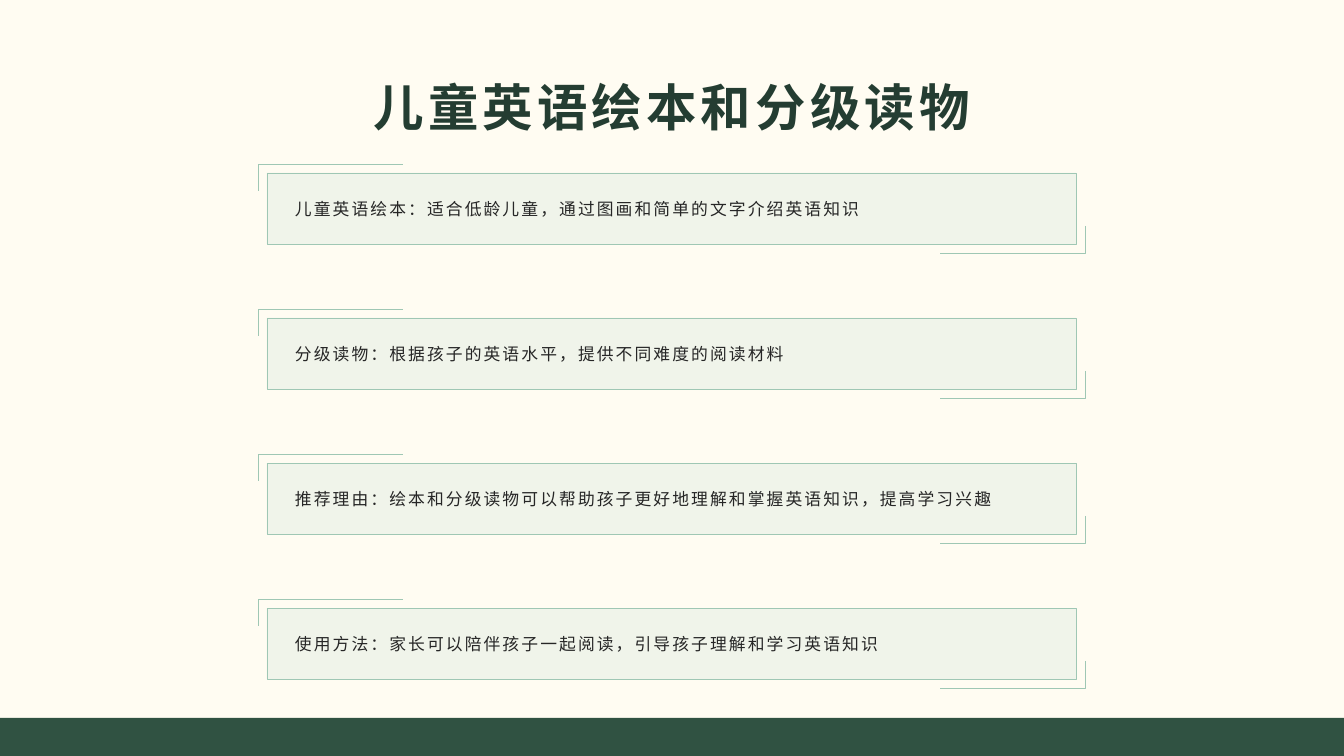
"""Builds the slide on English picture books and graded readers for children."""
from dataclasses import dataclass

from pptx import Presentation
from pptx import util as u
from pptx.dml.color import RGBColor
from pptx.enum import shapes, text
from pptx.oxml.ns import qn
from lxml import etree

PX = 914400 / 100.8
WIDTH, HEIGHT = 1344, 756

TITLE = "儿童英语绘本和分级读物"
POINTS = [
    "儿童英语绘本：适合低龄儿童，通过图画和简单的文字介绍英语知识",
    "分级读物：根据孩子的英语水平，提供不同难度的阅读材料",
    "推荐理由：绘本和分级读物可以帮助孩子更好地理解和掌握英语知识，提高学习兴趣",
    "使用方法：家长可以陪伴孩子一起阅读，引导孩子理解和学习英语知识",
]


@dataclass(frozen=True)
class Theme:
    """Colours, fonts and type sizes of the slide."""
    paper: str = "FFFCF2"
    band: str = "305242"
    heading: str = "243D32"
    body: str = "262626"
    card: str = "CFE3DA"
    outline: str = "9FC7B4"
    card_opacity: int = 30
    line_width: float = 0.5
    font: str = "Noto Sans CJK SC"
    heading_size: int = 36
    body_size: int = 12
    heading_spacing: float = 3
    body_spacing: float = 1.5


def px(length):
    """Turns px into EMU."""
    return u.Emu(round(length * PX))


def assign(target, values):
    """Sets attributes from a dict of format values."""
    for name, value in values.items():
        setattr(target, name, value)


class SlideBuilder:
    """Draws styled elements on the current page."""

    def __init__(self, page, theme):
        """Keeps the page and theme and paints the background."""
        self.page, self.theme = page, theme
        self.paint(page.background.fill, theme.paper)

    def paint(self, fill, colour):
        """Makes a fill solid in one colour."""
        fill.solid()
        fill.fore_color.rgb = RGBColor.from_string(colour)

    def outline(self, shape):
        """Gives a shape the thin green line."""
        self.paint(shape.line.fill, self.theme.outline)
        shape.line.width = u.Pt(self.theme.line_width)

    def label(self, shape, words, colour, size, spacing, align, bold=False, inset=10):
        """Fills a shape with one styled paragraph."""
        frame = shape.text_frame
        assign(frame, {
            "word_wrap": True, "auto_size": text.MSO_AUTO_SIZE.NONE,
            "vertical_anchor": text.MSO_ANCHOR.MIDDLE,
            "margin_left": px(inset), "margin_right": px(10),
            "margin_top": px(5), "margin_bottom": px(5),
        })
        para = frame.paragraphs[0]
        para.alignment = align
        span = para.add_run()
        span.text = words
        assign(span.font, {"name": self.theme.font, "size": u.Pt(size), "bold": bold})
        span.font.color.rgb = RGBColor.from_string(colour)
        properties = span.font._element
        properties.set("spc", str(round(spacing * 100)))
        latin = properties.find(qn("a:latin"))
        east_asian = etree.Element(qn("a:ea"), typeface=self.theme.font)
        latin.addnext(east_asian)

    def title(self, words, left, top, width, height):
        """Places the title placeholder."""
        box = self.page.shapes.title
        assign(box, {"left": px(left), "top": px(top),
                     "width": px(width), "height": px(height)})
        self.label(box, words, self.theme.heading, self.theme.heading_size,
                   self.theme.heading_spacing, text.PP_ALIGN.CENTER, bold=True)

    def rectangle(self, colour, left, top, width, height):
        """Adds a plain filled rectangle."""
        box = self.page.shapes.add_shape(
            shapes.MSO_SHAPE.RECTANGLE, *map(px, (left, top, width, height)))
        box.shadow.inherit = False
        self.paint(box.fill, colour)
        box.line.fill.background()
        return box

    def corner(self, points):
        """Adds an open angle through three points."""
        start, *others = [(px(x), px(y)) for x, y in points]
        builder = self.page.shapes.build_freeform(*start)
        builder.add_line_segments(others, close=False)
        angle = builder.convert_to_shape()
        angle.shadow.inherit = False
        angle.fill.background()
        self.outline(angle)

    def card(self, words, left, top, width, height, gap=9, long_arm=145, short_arm=27):
        """Adds a text card framed by two opposite corners."""
        box = self.rectangle(self.theme.card, left, top, width, height)
        colour = box.fill._xPr.find(qn("a:solidFill"))[0]
        etree.SubElement(colour, qn("a:alpha"), val=str(self.theme.card_opacity * 1000))
        self.outline(box)
        self.label(box, words, self.theme.body, self.theme.body_size,
                   self.theme.body_spacing, text.PP_ALIGN.LEFT, inset=28)
        for x, y, inward in ((left - gap, top - gap, 1),
                             (left + width + gap, top + height + gap, -1)):
            self.corner([(x, y + inward * short_arm), (x, y), (x + inward * long_arm, y)])


def main():
    """Builds and saves the deck."""
    deck = Presentation()
    assign(deck, {"slide_width": px(WIDTH), "slide_height": px(HEIGHT)})
    theme = Theme()
    slide = SlideBuilder(deck.slides.add_slide(deck.slide_layouts[5]), theme)
    slide.rectangle(theme.band, 0, 718, WIDTH, 38)
    slide.title(TITLE, 67, 67, 1210, 78)
    for row, words in enumerate(POINTS):
        slide.card(words, left=267, top=173 + 145 * row, width=809, height=71)
    deck.save("out.pptx")


if __name__ == "__main__":
    main()
